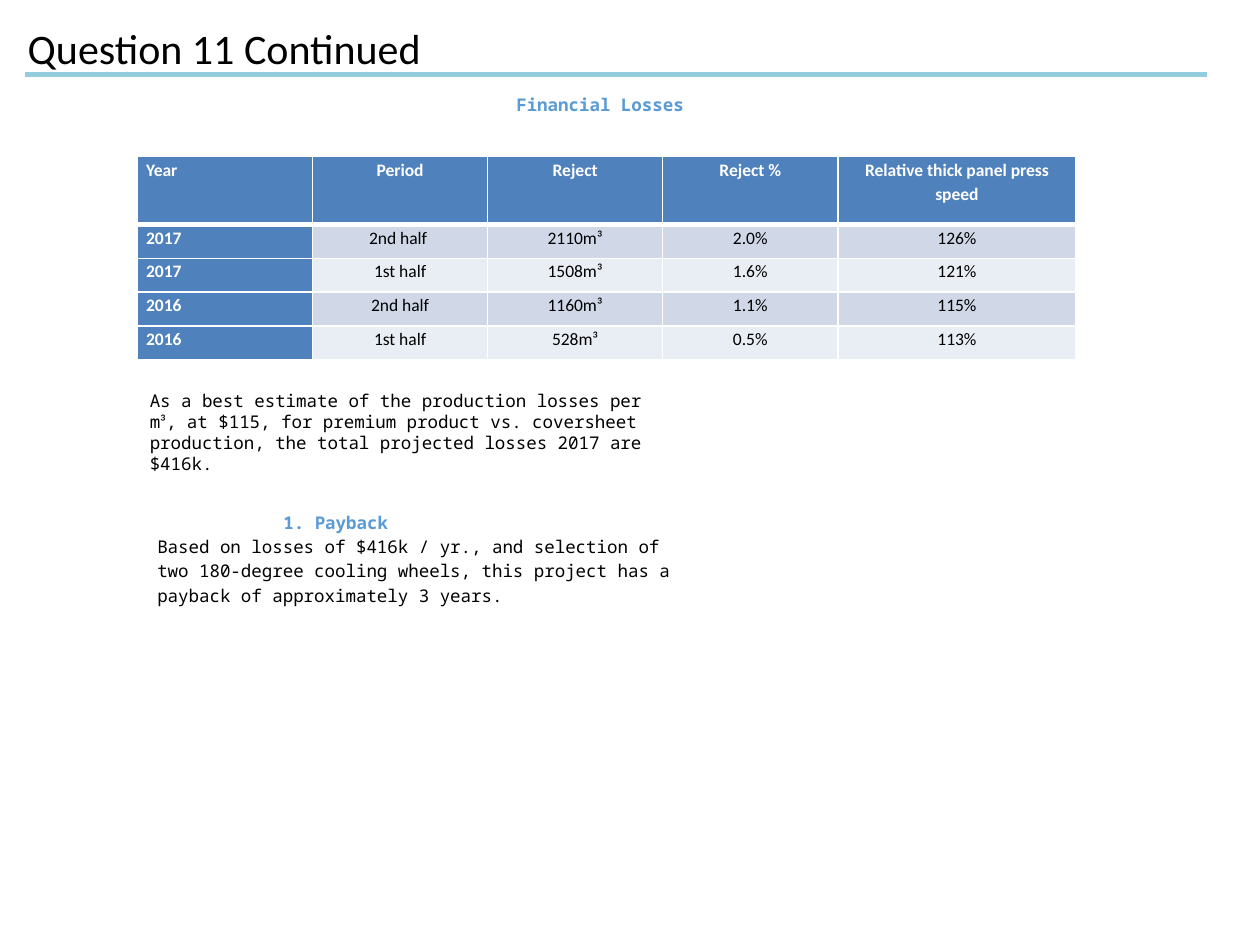
from dataclasses import dataclass

from lxml import etree
from pptx import Presentation
from pptx import util as u
from pptx.dml.color import RGBColor
from pptx.enum import shapes, text
from pptx.oxml import ns


@dataclass(frozen=True)
class Theme:
    """Colours, fonts and type sizes of the slide."""
    black: str = "000000"
    white: str = "FFFFFF"
    rule: str = "93CDDD"
    heading: str = "5B9BD5"
    header: str = "4F81BD"
    bands: tuple = ("D0D8E8", "E9EDF4")
    sans: str = "Calibri"
    mono: str = "Noto Sans Mono"
    title_size: int = 24
    body_size: int = 10


THEME = Theme()

LOSSES = [
    ("Year", "Period", "Reject", "Reject %", "Relative thick panel press speed"),
    ("2017", "2nd half ", "2110m³", "2.0%", "126%"),
    ("2017", "1st half", "1508m³", "1.6%", "121%"),
    ("2016", "2nd half", "1160m³", "1.1%", "115%"),
    ("2016", "1st half", "528m³", "0.5%", "113%"),
]


def style_font(font, name, color, size=THEME.body_size, bold=False):
    """Set the typeface, colour, size and weight of a font."""
    font.name = name
    font.size = u.Pt(size)
    font.bold = bold
    font.color.rgb = RGBColor.from_string(color)


def add_run(paragraph, content, name=THEME.mono, color=THEME.black, bold=False):
    """Append formatted text to a paragraph."""
    run = paragraph.add_run()
    run.text = content
    style_font(run.font, name, color, bold=bold)


def add_heading(paragraph, content, margin, indent=0, numbered=False):
    """Write an indented blue heading, numbered on request."""
    properties = paragraph._p.get_or_add_pPr()
    properties.set("marL", str(u.Inches(margin)))
    properties.set("indent", str(u.Inches(indent)))
    if numbered:
        etree.SubElement(properties, ns.qn("a:buFont"), typeface="+mj-lt")
        etree.SubElement(properties, ns.qn("a:buAutoNum"), type="arabicPeriod")
    paragraph.line_spacing = 1.15
    style_font(paragraph.font, THEME.mono, THEME.heading, bold=True)
    add_run(paragraph, content, color=THEME.heading, bold=True)


def add_text_box(slide, left, top, width, height, anchor=text.MSO_ANCHOR.TOP):
    """Add a wrapping text box that grows with its text and return its frame."""
    shape = slide.shapes.add_textbox(
        u.Inches(left), u.Inches(top), u.Inches(width), u.Inches(height))
    frame = shape.text_frame
    frame.word_wrap = True
    frame.auto_size = text.MSO_AUTO_SIZE.SHAPE_TO_FIT_TEXT
    frame.vertical_anchor = anchor
    return frame


def add_rule(slide):
    """Draw the line below the title."""
    rule = slide.shapes.add_connector(
        shapes.MSO_CONNECTOR.STRAIGHT,
        u.Inches(0.2), u.Inches(0.59), u.Inches(9.58), u.Inches(0.59))
    rule.line.color.rgb = RGBColor.from_string(THEME.rule)
    rule.line.width = u.Pt(2.75)
    etree.SubElement(rule._element.spPr, ns.qn("a:effectLst"))


def set_title(slide, content):
    """Place and format the title."""
    title = slide.shapes.title
    title.left, title.top = u.Inches(0.22), u.Inches(0.11)
    title.width, title.height = u.Inches(5.28), u.Inches(0.47)
    frame = title.text_frame
    frame.text = content
    frame.word_wrap = False
    frame.auto_size = text.MSO_AUTO_SIZE.NONE
    frame.vertical_anchor = text.MSO_ANCHOR.BOTTOM
    frame.margin_left = frame.margin_right = 0
    frame.margin_top = frame.margin_bottom = 0
    paragraph = frame.paragraphs[0]
    paragraph.alignment = text.PP_ALIGN.LEFT
    style_font(paragraph.runs[0].font, THEME.sans, THEME.black, THEME.title_size)


def set_borders(cell, top, bottom):
    """Give a cell white borders with the stated top and bottom widths."""
    properties = cell._tc.get_or_add_tcPr()
    widths = {"lnL": 1, "lnR": 1, "lnT": top, "lnB": bottom}
    for side, width in widths.items():
        line = etree.SubElement(properties, ns.qn(f"a:{side}"), w=str(u.Pt(width)))
        fill = etree.SubElement(line, ns.qn("a:solidFill"))
        etree.SubElement(fill, ns.qn("a:srgbClr"), val=THEME.white)


def format_cell(cell, content, row, column):
    """Fill one table cell according to its row and column."""
    emphasized = row == 0 or column == 0
    set_borders(cell, top=3 if row == 1 else 1, bottom=3 if row == 0 else 1)
    cell.fill.solid()
    color = THEME.header if emphasized else THEME.bands[(row - 1) % 2]
    cell.fill.fore_color.rgb = RGBColor.from_string(color)
    cell.margin_left = cell.margin_right = u.Inches(0.07)
    cell.margin_top = cell.margin_bottom = 0
    cell.text_frame.text = content
    paragraph = cell.text_frame.paragraphs[0]
    paragraph.alignment = text.PP_ALIGN.CENTER if column else text.PP_ALIGN.LEFT
    paragraph.line_spacing = 1.15
    paragraph.space_after = u.Pt(10)
    style_font(paragraph.runs[0].font, THEME.sans,
               THEME.white if emphasized else THEME.black, bold=emphasized)


def add_losses_table(slide):
    """Add the table of rejects and press speed."""
    widths = [1.39] * 4 + [1.89]
    heights = [0.54] + [0.27] * 4
    table = slide.shapes.add_table(
        len(heights), len(widths), u.Inches(1.09), u.Inches(1.24),
        u.Inches(sum(widths)), u.Inches(sum(heights))).table
    for column, width in zip(table.columns, widths):
        column.width = u.Inches(width)
    for row, height in zip(table.rows, heights):
        row.height = u.Inches(height)
    for row, values in enumerate(LOSSES):
        for column, value in enumerate(values):
            format_cell(table.cell(row, column), value, row, column)


def add_estimate(slide):
    """Add the paragraph on projected losses."""
    frame = add_text_box(slide, 1.09, 3.12, 4.31, 0.61, text.MSO_ANCHOR.MIDDLE)
    paragraph = frame.paragraphs[0]
    add_run(paragraph, "As a best estimate of the production losses per m")
    add_run(paragraph, "³", name=THEME.sans)
    add_run(paragraph, ", at $115, for premium product vs. coversheet production, "
                       "the total projected losses 2017 are $416k.")


def add_payback(slide):
    """Add the numbered payback heading and its explanation."""
    frame = add_text_box(slide, 1.15, 3.99, 4.35, 0.88)
    add_heading(frame.paragraphs[0], "Payback", 1.25, -0.25, numbered=True)
    paragraph = frame.add_paragraph()
    paragraph.line_spacing = 1.15
    paragraph.space_after = u.Pt(10)
    add_run(paragraph, "Based on losses of $416k / yr., and selection of two "
                       "180-degree cooling wheels, this project has a payback of "
                       "approximately 3 years.")


def main():
    """Build and save the slide."""
    presentation = Presentation()
    presentation.slide_width, presentation.slide_height = u.Inches(10), u.Inches(7.5)
    slide = presentation.slides.add_slide(presentation.slide_layouts[5])
    add_rule(slide)
    set_title(slide, "Question 11 Continued")
    add_losses_table(slide)
    add_estimate(slide)
    add_payback(slide)
    losses_frame = add_text_box(slide, 3, 0.67, 2.64, 0.29)
    add_heading(losses_frame.paragraphs[0], "Financial Losses", 1)
    presentation.save("out.pptx")


if __name__ == "__main__":
    main()
